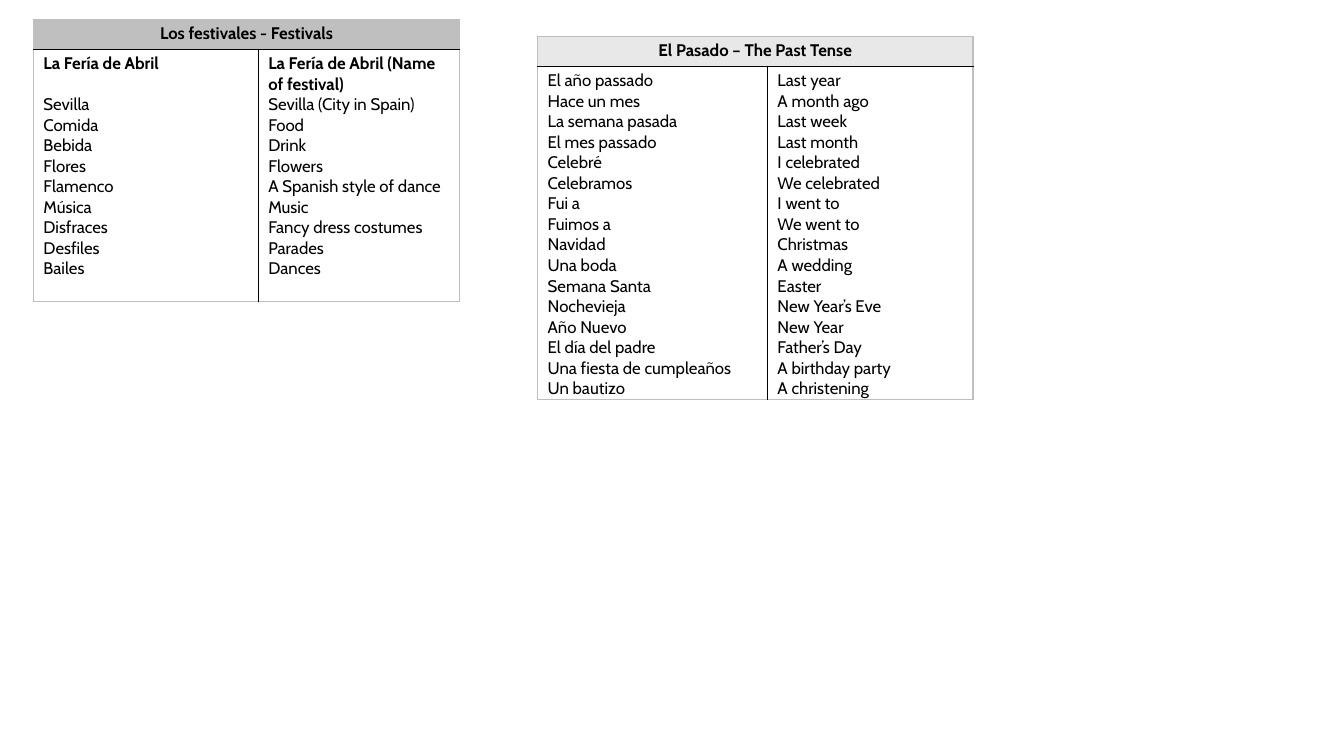
from lxml import etree
from pptx import Presentation
from pptx.dml.color import RGBColor
from pptx.enum.text import PP_ALIGN
from pptx.oxml.ns import qn
from pptx.util import Inches, Pt

CENTER, LEFT = PP_ALIGN.CENTER, PP_ALIGN.LEFT
BLACK = RGBColor(0x00, 0x00, 0x00)
WHITE = RGBColor(0xFF, 0xFF, 0xFF)
GREY = RGBColor(0xBF, 0xBF, 0xBF)
PALE_GREY = RGBColor(0xE8, 0xE8, 0xE8)

FESTIVALS = [
    ("La Fería de Abril", "La Fería de Abril (Name of festival)"),
    ("Sevilla", "Sevilla (City in Spain)"),
    ("Comida", "Food"),
    ("Bebida", "Drink"),
    ("Flores", "Flowers"),
    ("Flamenco", "A Spanish style of dance"),
    ("Música", "Music"),
    ("Disfraces", "Fancy dress costumes"),
    ("Desfiles", "Parades"),
    ("Bailes", "Dances"),
]
PAST_TENSE = [
    ("El año passado", "Last year"),
    ("Hace un mes", "A month ago"),
    ("La semana pasada", "Last week"),
    ("El mes passado", "Last month"),
    ("Celebré", "I celebrated"),
    ("Celebramos", "We celebrated"),
    ("Fui a", "I went to"),
    ("Fuimos a", "We went to"),
    ("Navidad", "Christmas"),
    ("Una boda", "A wedding"),
    ("Semana Santa", "Easter"),
    ("Nochevieja", "New Year’s Eve"),
    ("Año Nuevo", "New Year"),
    ("El día del padre", "Father’s Day"),
    ("Una fiesta de cumpleaños", "A birthday party"),
    ("Un bautizo", "A christening"),
]


def write(para, text, bold=False, align=LEFT, after=0):
    para.alignment = align
    para.space_after = Pt(after)
    span = para.add_run()
    span.text = text
    span.font.name = "Cabin"
    span.font.size = Pt(12)
    span.font.bold = bold
    span.font.color.rgb = BLACK


def set_borders(cell, **sides):
    """Draw 1 pt lines; the sides are given in the order L, R, T, B."""
    properties = cell._tc.get_or_add_tcPr()
    for index, (side, color) in enumerate(sides.items()):
        line = etree.Element(qn(f"a:ln{side}"), w=str(Pt(1)))
        fill = etree.SubElement(line, qn("a:solidFill"))
        etree.SubElement(fill, qn("a:srgbClr"), val=str(color))
        properties.insert(index, line)


class VocabularySlide:
    """Lengths are percentages of the slide's width and height."""

    header_height = 4

    def __init__(self, deck):
        self.deck = deck
        self.slide = deck.slides.add_slide(deck.slide_layouts[6])

    def across(self, share):
        return round(self.deck.slide_width * share / 100)

    def down(self, share):
        return round(self.deck.slide_height * share / 100)

    def word_table(self, title, pairs, left, top, widths, body_height,
                   header_fill, body_fill=None, has_heading=False):
        heights = (self.header_height, body_height)
        table = self.slide.shapes.add_table(
            2, 2, self.across(left), self.down(top),
            self.across(sum(widths)), self.down(sum(heights))).table
        table.first_row = table.horz_banding = False
        for column, width in zip(table.columns, widths):
            column.width = self.across(width)
        for row, height in zip(table.rows, heights):
            row.height = self.down(height)

        header = table.cell(0, 0)
        header.merge(table.cell(0, 1))
        write(header.text_frame.paragraphs[0], title, bold=True, align=CENTER)
        for cell in table.rows[0].cells:
            self.style_cell(cell, header_fill, L=GREY, R=GREY, T=GREY, B=BLACK)

        sides = ((GREY, BLACK), (BLACK, GREY))
        for column, (words, (west, east)) in enumerate(zip(zip(*pairs), sides)):
            cell = table.cell(1, column)
            self.fill_words(cell.text_frame, words, has_heading, column)
            self.style_cell(cell, body_fill, L=west, R=east, T=BLACK, B=GREY)
            cell.margin_bottom = 0

    def fill_words(self, frame, words, has_heading, column):
        for index, word in enumerate(words):
            para = frame.add_paragraph() if index else frame.paragraphs[0]
            heading = has_heading and index == 0
            # The English heading takes two lines, the Spanish one only one.
            write(para, word, bold=heading,
                  after=14.6 if heading and column == 0 else 0)

    def style_cell(self, cell, color, **sides):
        if color is None:
            cell.fill.background()
        else:
            cell.fill.solid()
            cell.fill.fore_color.rgb = color
        cell.margin_left = cell.margin_right = Inches(0.1)
        cell.margin_top = cell.margin_bottom = Inches(0.04)
        set_borders(cell, **sides)


def main():
    deck = Presentation()
    deck.slide_width, deck.slide_height = Inches(13.33), Inches(7.5)
    page = VocabularySlide(deck)
    page.word_table("El Pasado – The Past Tense", PAST_TENSE, left=40, top=4.8,
                    widths=(17.1, 15.3), body_height=44, header_fill=PALE_GREY)
    page.word_table("Los festivales - Festivals", FESTIVALS, left=2.48, top=2.53,
                    widths=(16.73, 15), body_height=33.33, header_fill=GREY,
                    body_fill=WHITE, has_heading=True)
    deck.save("out.pptx")


if __name__ == "__main__":
    main()
